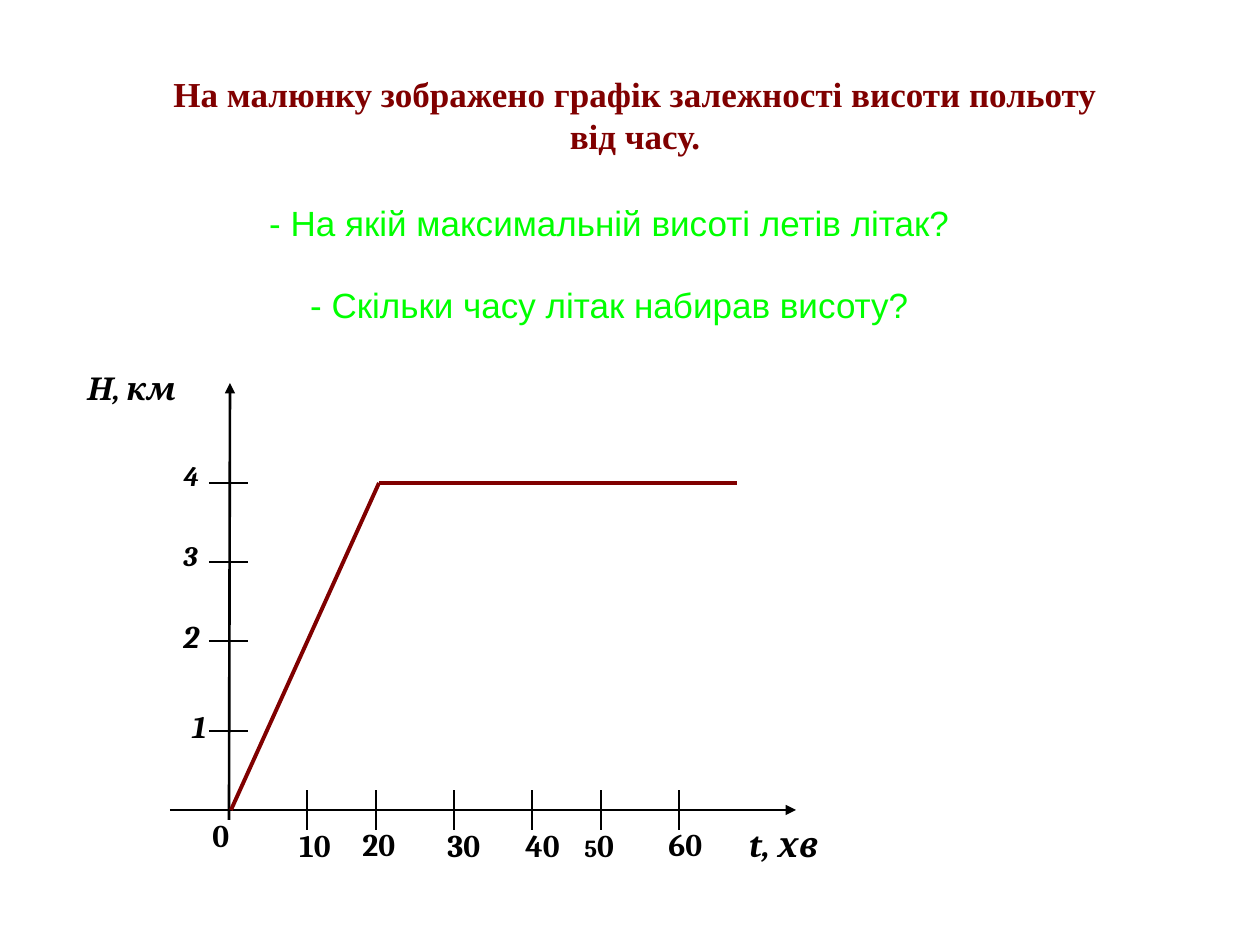
"""Build a slide with a graph of flight altitude against time."""
import pptx
import pptx.dml.color
import pptx.enum.shapes
import pptx.enum.text
import pptx.oxml
import pptx.oxml.ns
import pptx.util

BLACK = pptx.dml.color.RGBColor(0x00, 0x00, 0x00)
MAROON = pptx.dml.color.RGBColor(0x80, 0x00, 0x00)
GREEN = pptx.dml.color.RGBColor(0x00, 0xFF, 0x00)
PX = pptx.util.Inches(1) / 126

TITLE = "На малюнку зображено графік залежності висоти польоту від часу."
QUESTIONS = [
    ("- На якій максимальній висоті летів літак?", 195),
    ("- Скільки часу літак набирав висоту?", 277),
]
AXES = [((170, 810), (796, 810)), ((229, 820), (230, 383))]
FLIGHT = [(231, 810), (379, 483), (737, 483)]
ALTITUDE_TICKS = [731, 641, 562, 483]
TIME_TICKS = [307, 376, 454, 532, 601, 679]
ALTITUDE_LABELS = [
    ("1", 180, 701, 57, 18),
    ("2", 171, 611, 78, 18),
    ("3", 171, 532, 88, 16),
    ("4", 171, 452, 78, 16),
    ("Н, км", 75, 363, 142, 18),
    ("t, хв", 737, 816, 102, 20),
]
TIME_LABELS = [
    ([("0", 18)], 200, 810, 44),
    ([("10", 18)], 287, 820, 63),
    ([("20", 18)], 350, 819, 88),
    ([("30", 18)], 435, 820, 67),
    ([("40", 18)], 513, 820, 68),
    ([("5", 14), ("0", 18)], 572, 820, 62),
    ([("60", 18)], 656, 819, 68),
]


def px(value):
    return round(value * PX)


def add_text(slide, runs, left, top, width, height=50, font="Cambria", color=BLACK,
             bold=True, italic=False, centered=False, wrap=True):
    shape = slide.shapes.add_textbox(px(left), px(top), px(width), px(height))
    shape.text_frame.word_wrap = wrap
    paragraph = shape.text_frame.paragraphs[0]
    if centered:
        paragraph.alignment = pptx.enum.text.PP_ALIGN.CENTER
    for text, size in runs:
        run = paragraph.add_run()
        run.text = text
        run.font.name = font
        run.font.size = pptx.util.Pt(size)
        run.font.bold = bold
        run.font.italic = italic
        run.font.color.rgb = color


def add_line(slide, start, end, color=BLACK, width=0.75, arrow=False):
    connector = slide.shapes.add_connector(
        pptx.enum.shapes.MSO_CONNECTOR.STRAIGHT, *map(px, start + end))
    connector.line.color.rgb = color
    connector.line.width = pptx.util.Pt(width)
    properties = connector._element.spPr
    if arrow:
        line = connector.line._get_or_add_ln()
        tail = pptx.oxml.parse_xml(
            f'<a:tailEnd {pptx.oxml.ns.nsdecls("a")} type="triangle"/>')
        line.append(tail)
    properties.append(pptx.oxml.parse_xml(
        f'<a:effectLst {pptx.oxml.ns.nsdecls("a")}/>'))


def main():
    presentation = pptx.Presentation()
    presentation.slide_width = pptx.util.Inches(10)
    presentation.slide_height = pptx.util.Inches(7.5)
    slide = presentation.slides.add_slide(presentation.slide_layouts[6])

    add_text(slide, [(TITLE, 20)], 134, 66, 1002, 69, font="Times New Roman",
             color=MAROON, centered=True, wrap=False)
    for question, top in QUESTIONS:
        add_text(slide, [(question, 20)], 113, top, 993, 84, font="Arial",
                 color=GREEN, bold=False, centered=True, wrap=False)

    for start, end in AXES:
        add_line(slide, start, end, width=1.5, arrow=True)
    for y in ALTITUDE_TICKS:
        add_line(slide, (209, y), (248, y))
    for x in TIME_TICKS:
        add_line(slide, (x, 830), (x, 790))
    for text, left, top, width, size in ALTITUDE_LABELS:
        add_text(slide, [(text, size)], left, top, width, italic=True)
    for runs, left, top, width in TIME_LABELS:
        add_text(slide, runs, left, top, width)
    for start, end in zip(FLIGHT, FLIGHT[1:]):
        add_line(slide, start, end, color=MAROON, width=2.25)

    presentation.save("out.pptx")


if __name__ == "__main__":
    main()
